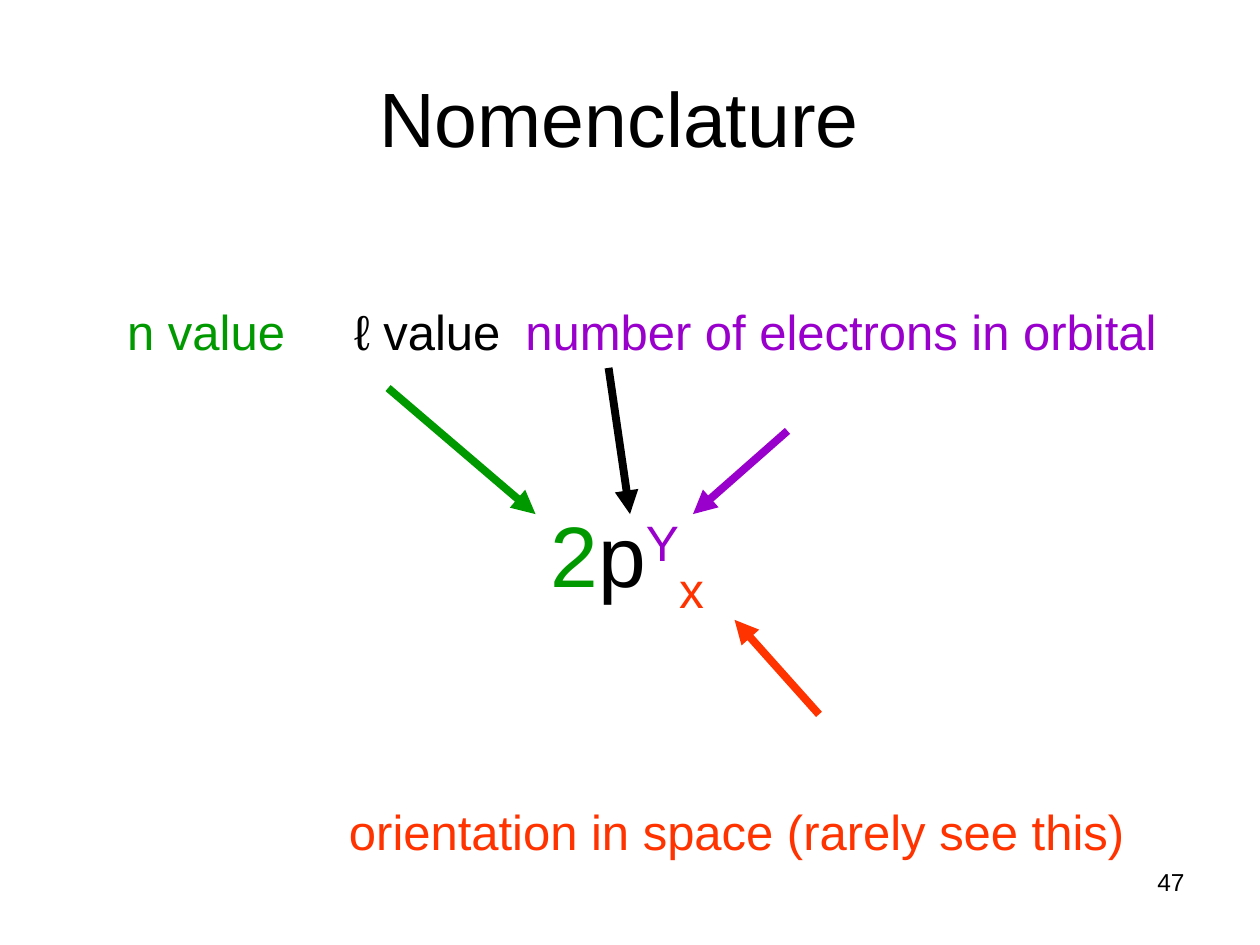
from lxml import etree
from pptx import Presentation
from pptx.dml.color import RGBColor
from pptx.enum.shapes import MSO_CONNECTOR
from pptx.enum.text import MSO_ANCHOR, PP_ALIGN
from pptx.oxml.ns import qn
from pptx.util import Inches, Pt

STRAIGHT = MSO_CONNECTOR.STRAIGHT
TOP, MIDDLE = MSO_ANCHOR.TOP, MSO_ANCHOR.MIDDLE
LEFT, CENTER, RIGHT = PP_ALIGN.LEFT, PP_ALIGN.CENTER, PP_ALIGN.RIGHT
BLACK = RGBColor(0x00, 0x00, 0x00)
GREEN = RGBColor(0x00, 0x99, 0x00)
PURPLE = RGBColor(0x99, 0x00, 0xCC)
RED = RGBColor(0xFF, 0x33, 0x00)

prs = Presentation()
prs.slide_width, prs.slide_height = Inches(10), Inches(7.5)
slide = prs.slides.add_slide(prs.slide_layouts[6])


def add_text(box, runs, size, align=LEFT, anchor=TOP, inset=0):
    """Add one line of (text, colour, baseline) runs and return its shape."""
    shape = slide.shapes.add_textbox(*map(Inches, box))
    frame = shape.text_frame
    frame.word_wrap = True
    frame.vertical_anchor = anchor
    frame.margin_left = frame.margin_right = Inches(2 * inset)
    frame.margin_top = frame.margin_bottom = Inches(inset)
    para = frame.paragraphs[0]
    para.alignment = align
    para.font.name, para.font.size = "Arial", Pt(size)
    for text, color, base in runs:
        run = para.add_run()
        run.text = text
        run.font.name, run.font.size = "Arial", Pt(size)
        run.font.color.rgb = color
        if base:
            run.font._element.set("baseline", str(base * 1000))
    return shape


# Title and slide number
add_text((0.5, 0.3, 9, 1.25), [("Nomenclature ", BLACK, 0)], 44,
         CENTER, MIDDLE, 0.05)
add_text((7.17, 6.83, 2.33, 0.52), [("47", BLACK, 0)], 14, RIGHT, TOP, 0.05)

# Labels
for left, top, width, text, color in [
    (1.01, 2.39, 1.6, "n value", GREEN),
    (2.81, 2.39, 1.35, "ℓ value", BLACK),
    (4.17, 2.39, 5.3, "number of electrons in orbital", PURPLE),
    (2.77, 6.36, 6.6, "orientation in space (rarely see this)", RED),
]:
    add_text((left, top, width, 0.45), [(text, color, 0)], 28)

# Orbital symbol
add_text((4.37, 3.98, 1.6, 0.8),
         [("2", GREEN, 0), ("p", BLACK, 0), ("Y", PURPLE, 30), ("x", RED, -25)],
         49)

# Arrows from the labels to the parts of the symbol
for x1, y1, x2, y2, color in [
    (3.08, 3.08, 4.25, 4.08, GREEN),
    (4.83, 2.92, 5, 4.08, BLACK),
    (6.5, 5.67, 5.83, 4.92, RED),
    (6.25, 3.42, 5.5, 4.08, PURPLE),
]:
    arrow = slide.shapes.add_connector(STRAIGHT, *map(Inches, (x1, y1, x2, y2)))
    arrow.line.color.rgb = color
    arrow.line.width = Pt(4.5)
    etree.SubElement(arrow.line._get_or_add_ln(), qn("a:tailEnd"), type="triangle")
    etree.SubElement(arrow._element.spPr, qn("a:effectLst"))

prs.save("out.pptx")
